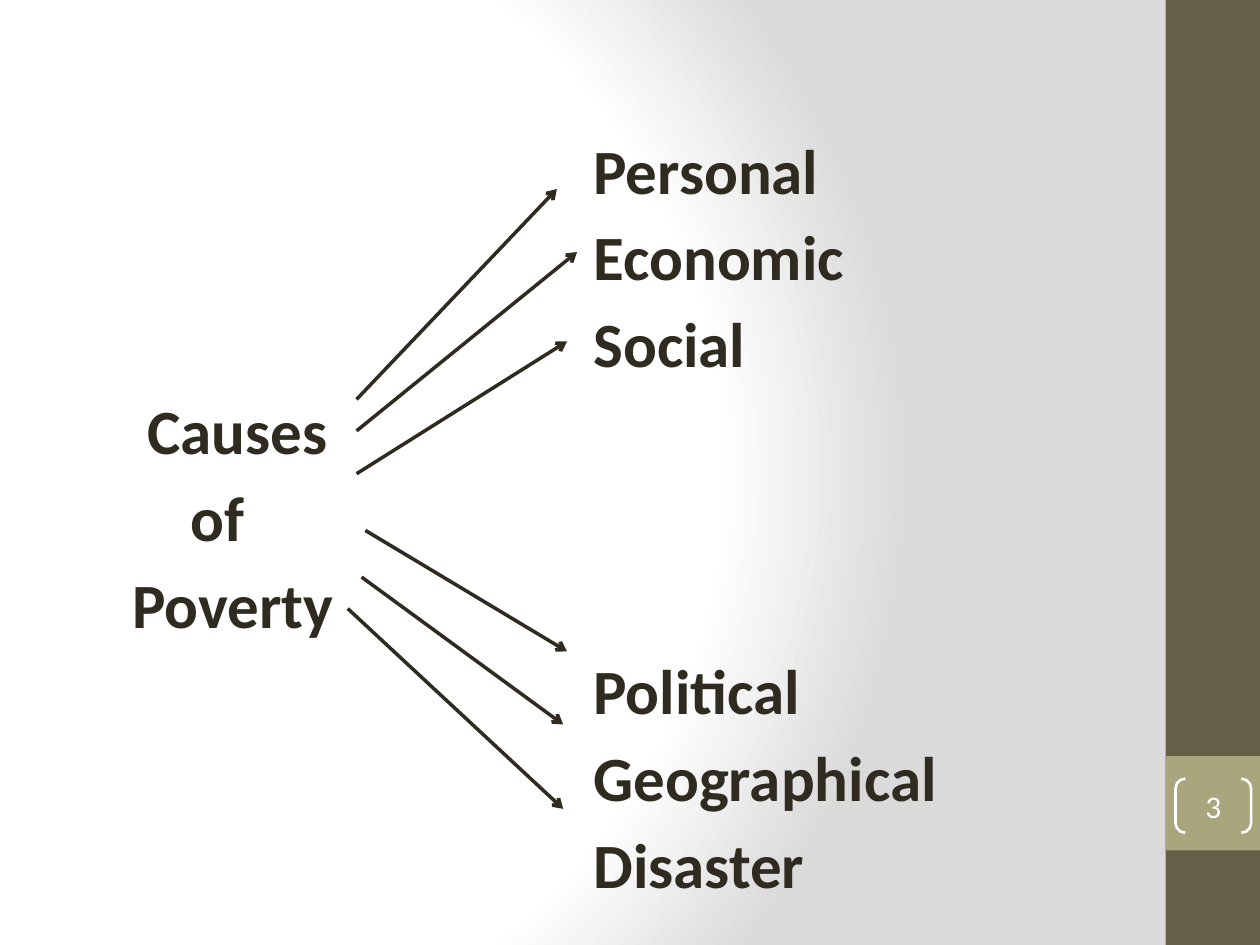
import pptx
import pptx.util
import pptx.dml.color
import pptx.oxml
import pptx.oxml.ns
import pptx.enum.shapes
import pptx.enum.text
from lxml import etree

Inches, Pt = pptx.util.Inches, pptx.util.Pt
RGB = pptx.dml.color.RGBColor.from_string
SHAPE = pptx.enum.shapes.MSO_SHAPE
ALIGN = pptx.enum.text.PP_ALIGN
ANCHOR = pptx.enum.text.MSO_ANCHOR
qn = pptx.oxml.ns.qn

COLORS = {"text": "2F2B20", "bar": "675E47", "accent": "A9A57C",
          "white": "FFFFFF", "gray": "DADADA"}


def write(p, text, size, color, bold=False, align=ALIGN.LEFT):
    p.alignment = align
    r = p.add_run()
    r.text = text
    r.font.name = "Calibri"
    r.font.size = Pt(size)
    r.font.bold = bold
    r.font.color.rgb = RGB(COLORS[color])


prs = pptx.Presentation()
prs.slide_width, prs.slide_height = Inches(10), Inches(7.5)
s = prs.slides.add_slide(prs.slide_layouts[1])
title = s.shapes.title
title.element.getparent().remove(title.element)

# Background: white glow fading to gray on the right
s.background.fill.solid()
bg = s.background.fill._xPr
stops = "".join(
    f'<a:gs pos="{pos * 1000}"><a:srgbClr val="{COLORS[name]}"/></a:gs>'
    for pos, name in [(0, "white"), (75, "white"), (100, "gray")])
gradient = pptx.oxml.parse_xml(
    f'<a:gradFill {pptx.oxml.ns.nsdecls("a")} rotWithShape="1"><a:gsLst>{stops}</a:gsLst>'
    '<a:path path="circle"><a:fillToRect l="20000" t="50000" r="100000" b="50000"/>'
    '</a:path></a:gradFill>')
bg.replace(bg.find(qn("a:solidFill")), gradient)

# Side bar
for top, height, color in [(0, 7.5, "bar"), (6, 0.75, "accent")]:
    sp = s.shapes.add_shape(SHAPE.RECTANGLE, Inches(9.25), Inches(top),
                            Inches(0.75), Inches(height))
    sp.shadow.inherit = False
    sp.fill.solid()
    sp.fill.fore_color.rgb = RGB(COLORS[color])
    sp.line.fill.background()

# Causes: one list, the centre label between two groups of three
body = s.placeholders[1]
body.left, body.top = Inches(0.5), Inches(0.5)
body.width, body.height = Inches(8.33), Inches(6.5)
tf = body.text_frame
tf.auto_size = pptx.enum.text.MSO_AUTO_SIZE.NONE
tf.vertical_anchor = ANCHOR.TOP
tf.margin_top = Inches(0.54)
CAUSE = 4.11
lines = [("Personal", CAUSE), ("Economic", CAUSE), ("Social", CAUSE),
         ("Causes", 0.57), ("of", 0.91), ("Poverty", 0.45),
         ("Political", CAUSE), ("Geographical", CAUSE), ("Disaster", CAUSE)]
for i, (text, indent) in enumerate(lines):
    p = tf.add_paragraph() if i else tf.paragraphs[0]
    p.space_before = Pt(6.4 if i else 0)
    pPr = p._p.get_or_add_pPr()
    pPr.set("marL", str(Inches(indent)))
    pPr.set("indent", "0")
    etree.SubElement(pPr, qn("a:buNone"))
    write(p, text, 36, "text", bold=True)

# Slide number
sp = s.shapes.add_shape(SHAPE.DOUBLE_BRACKET, Inches(9.33), Inches(6.18),
                        Inches(0.6), Inches(0.43))
sp.adjustments[0] = 0.18
sp.shadow.inherit = False
sp.fill.background()
sp.line.color.rgb = RGB(COLORS["white"])
sp.line.width = Pt(1.5)
tf = sp.text_frame
tf.margin_left = tf.margin_right = tf.margin_top = tf.margin_bottom = 0
tf.vertical_anchor = ANCHOR.MIDDLE
write(tf.paragraphs[0], "3", 18, "white", align=ALIGN.CENTER)

# Arrows from the label to each cause
arrows = [(2.83, 3.17, 4.42, 1.5), (2.83, 3.42, 4.58, 2), (2.83, 3.76, 4.5, 2.71),
          (2.9, 4.21, 4.5, 5.17), (2.87, 4.58, 4.47, 5.75), (2.76, 4.83, 4.47, 6.42)]
for ends in arrows:
    arrow = s.shapes.add_connector(pptx.enum.shapes.MSO_CONNECTOR.STRAIGHT,
                                   *[Inches(v) for v in ends])
    arrow.line.color.rgb = RGB(COLORS["text"])
    arrow.line.width = Pt(2)
    etree.SubElement(arrow.line._get_or_add_ln(), qn("a:tailEnd"), type="arrow")
    etree.SubElement(arrow._element.spPr, qn("a:effectLst"))

prs.save("out.pptx")
